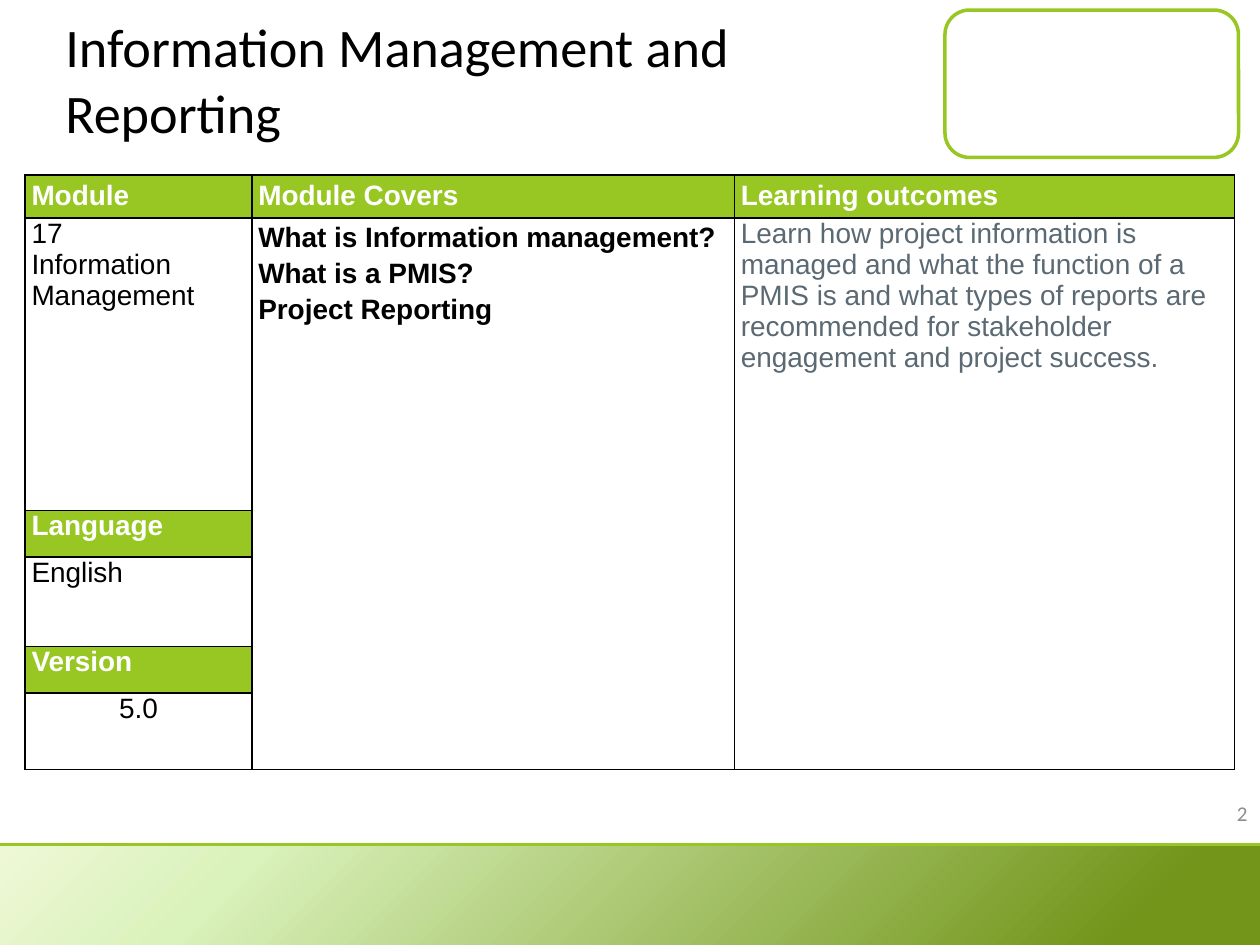
from lxml.etree import SubElement
from pptx import Presentation
from pptx.dml.color import RGBColor
from pptx.enum.shapes import MSO_CONNECTOR, MSO_SHAPE
from pptx.enum.text import MSO_ANCHOR, PP_ALIGN
from pptx.oxml import parse_xml
from pptx.oxml.ns import qn
from pptx.util import Inches, Pt

GREEN = RGBColor(0x98, 0xC7, 0x23)
BLACK = RGBColor(0, 0, 0)
WHITE = RGBColor(0xFF, 0xFF, 0xFF)
SLATE = RGBColor(0x5B, 0x69, 0x73)
GRAY = RGBColor(0x8C, 0x8C, 0x8C)
BAND_STOPS = [(0, "EEF8D5"), (19, "DAF2BC"), (89, "72951A")]
BAND_ANGLE = 45

TITLE = "Information Management and Reporting"
PAGE = "2"
COLS = [1.8, 3.83, 3.97]
ROWS = [0.34, 2.32, 0.37, 0.71, 0.37, 0.61]
HEAD = dict(color=WHITE, bold=True)
# (row, column): (paragraphs, text format)
CELLS = {
    (0, 0): (["Module"], dict(HEAD, spacing=1.15)),
    (0, 1): (["Module Covers"], dict(HEAD, spacing=1.15)),
    (0, 2): (["Learning outcomes"], dict(HEAD, spacing=1.15)),
    (1, 0): (["17", "Information Management"], {}),
    (1, 1): (["What is Information management?", "What is a PMIS?",
              "Project Reporting"], dict(bold=True, spacing=1.15)),
    (1, 2): (["Learn how project information is managed and what the function "
              "of a PMIS is and what types of reports are recommended for "
              "stakeholder engagement and project success."], dict(color=SLATE)),
    (2, 0): (["Language"], HEAD),
    (3, 0): (["English"], {}),
    (4, 0): (["Version"], HEAD),
    (5, 0): (["5.0"], dict(align=PP_ALIGN.CENTER)),
}


def write(tf, lines, size=16, font="Arial", color=BLACK, bold=False,
          align=PP_ALIGN.LEFT, spacing=None):
    tf.word_wrap = True
    for i, line in enumerate(lines):
        p = tf.paragraphs[0] if i == 0 else tf.add_paragraph()
        p.alignment = align
        p.line_spacing = spacing
        r = p.add_run()
        r.text = line
        r.font.size, r.font.name, r.font.bold = Pt(size), font, bold
        r.font.color.rgb = color


def add_text(s, box, text, **fmt):
    tf = s.shapes.add_textbox(*map(Inches, box)).text_frame
    tf.vertical_anchor = MSO_ANCHOR.MIDDLE
    write(tf, [text], font="Calibri", **fmt)


def add_block(s, kind, box):
    sp = s.shapes.add_shape(kind, *map(Inches, box))
    sp.shadow.inherit = False
    return sp


def fill_gradient(sp, stops, angle):
    """Fill with any number of stops; the angle runs clockwise."""
    sp.fill.gradient()
    grad = sp.fill._fill._gradFill
    for child in list(grad):
        grad.remove(child)
    gs_list = SubElement(grad, qn("a:gsLst"))
    for pos, color in stops:
        gs = SubElement(gs_list, qn("a:gs"), pos=str(pos * 1000))
        SubElement(gs, qn("a:srgbClr"), val=color)
    SubElement(grad, qn("a:lin"), ang=str(angle * 60000), scaled="0")


def add_borders(cell):
    tcPr = cell._tc.get_or_add_tcPr()
    for side in ("lnL", "lnR", "lnT", "lnB"):
        tcPr.append(parse_xml(
            f'<a:{side} xmlns:a="http://schemas.openxmlformats.org/drawingml/2006/main"'
            f' w="{Pt(1)}"><a:solidFill><a:srgbClr val="{BLACK}"/></a:solidFill></a:{side}>'))


def add_module_table(s, left, top):
    table = s.shapes.add_table(
        len(ROWS), len(COLS), Inches(left), Inches(top),
        Inches(sum(COLS)), Inches(sum(ROWS))).table
    for col, width in zip(table.columns, COLS):
        col.width = Inches(width)
    for row, height in zip(table.rows, ROWS):
        row.height = Inches(height)
    for c in (1, 2):
        table.cell(1, c).merge(table.cell(len(ROWS) - 1, c))
    for r in range(len(ROWS)):
        for c in range(len(COLS)):
            cell = table.cell(r, c)
            cell.margin_left = cell.margin_right = Inches(0.05)
            cell.margin_top = cell.margin_bottom = 0
            add_borders(cell)
            lines, fmt = CELLS.get((r, c), ([], {}))
            if fmt.get("color") == WHITE:
                cell.fill.solid()
                cell.fill.fore_color.rgb = GREEN
            else:
                cell.fill.background()
            write(cell.text_frame, lines, **fmt)


def main():
    prs = Presentation()
    prs.slide_width, prs.slide_height = Inches(10), Inches(7.5)
    s = prs.slides.add_slide(prs.slide_layouts[6])

    frame = add_block(s, MSO_SHAPE.ROUNDED_RECTANGLE, (7.5, 0.08, 2.33, 1.17))
    frame.fill.solid()
    frame.fill.fore_color.rgb = WHITE
    frame.line.color.rgb = GREEN
    frame.line.width = Pt(2)

    band = add_block(s, MSO_SHAPE.RECTANGLE, (0, 6.71, 10, 0.82))
    fill_gradient(band, BAND_STOPS, BAND_ANGLE)
    band.line.fill.background()

    rule = s.shapes.add_connector(
        MSO_CONNECTOR.STRAIGHT, 0, Inches(6.7), prs.slide_width, Inches(6.7))
    rule.line.color.rgb = GREEN
    rule.line.width = Pt(1.5)
    SubElement(rule._element.spPr, qn("a:effectLst"))

    add_text(s, (0.42, 0, 6.75, 1.25), TITLE, size=31)
    add_text(s, (7.67, 6.25, 2.33, 0.4), PAGE, size=12, color=GRAY,
             align=PP_ALIGN.RIGHT)
    add_module_table(s, 0.2, 1.39)
    prs.save("out.pptx")


if __name__ == "__main__":
    main()
